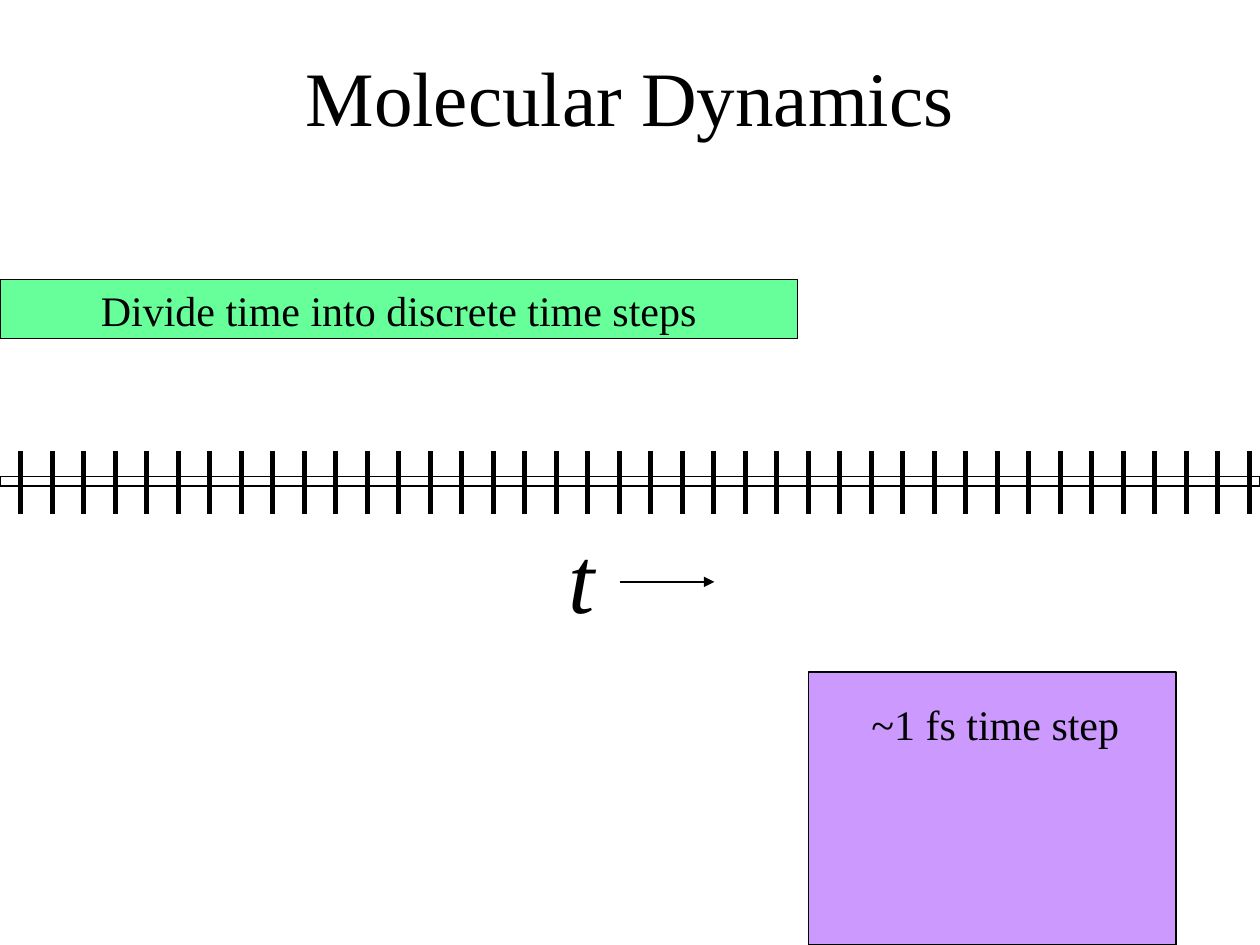
from lxml import etree
from pptx import Presentation
from pptx.dml.color import RGBColor
from pptx.enum.shapes import MSO_CONNECTOR, MSO_SHAPE
from pptx.enum.text import MSO_ANCHOR, PP_ALIGN
from pptx.oxml.ns import qn
from pptx.util import Cm, Pt

STRAIGHT = MSO_CONNECTOR.STRAIGHT
RECTANGLE = MSO_SHAPE.RECTANGLE
MIDDLE = MSO_ANCHOR.MIDDLE
TOP = MSO_ANCHOR.TOP
CENTER = PP_ALIGN.CENTER
LEFT = PP_ALIGN.LEFT
TICK_COUNT = 40


def color(hex_string):
    return RGBColor.from_string(hex_string)


presentation = Presentation()
presentation.slide_width = Cm(25.4)
presentation.slide_height = Cm(19.05)
slide = presentation.slides.add_slide(presentation.slide_layouts[6])

# Time axis bar, green statement and purple panel
panel_group = slide.shapes.add_group_shape()
boxes = []
for shapes, left, top, width, height, fill in [
    (slide.shapes, 0, 9.6, 25.4, 0.2, "FFFFFF"),
    (slide.shapes, 0, 5.64, 16.08, 1.19, "66FF99"),
    (panel_group.shapes, 16.3, 13.55, 7.41, 5.5, "CC99FF"),
]:
    shape = shapes.add_shape(RECTANGLE, Cm(left), Cm(top), Cm(width), Cm(height))
    shape.shadow.inherit = False
    shape.fill.solid()
    shape.fill.fore_color.rgb = color(fill)
    shape.line.color.rgb = color("000000")
    shape.line.width = Pt(0.75)
    boxes.append(shape)
axis_bar, statement, panel = boxes

# Text: title, statement, time symbol and step size
title = slide.shapes.add_textbox(0, Cm(1.07), Cm(25.4), Cm(1.7))
time_symbol = slide.shapes.add_textbox(Cm(11.22), Cm(10.34), Cm(1.27), Cm(2.31))
step_size = panel_group.shapes.add_textbox(Cm(16.89), Cm(14), Cm(6.35), Cm(1.17))
for shape, text, size, alignment, anchor in [
    (title, "Molecular Dynamics", 44, CENTER, MIDDLE),
    (statement, "Divide time into discrete time steps", 24, CENTER, MIDDLE),
    (time_symbol, "t", 54, LEFT, TOP),
    (step_size, "~1 fs time step", 24, CENTER, MIDDLE),
]:
    frame = shape.text_frame
    frame.word_wrap = True
    frame.vertical_anchor = anchor
    paragraph = frame.paragraphs[0]
    paragraph.text = text
    paragraph.alignment = alignment
    paragraph.font.name = "Times New Roman"
    paragraph.font.size = Pt(size)
    paragraph.font.italic = shape is time_symbol
    paragraph.font.color.rgb = color("000000")

# Evenly spaced ticks and the arrow of time
tick_group = slide.shapes.add_group_shape()
tick_gap = 25.4 / TICK_COUNT
lines = [
    (tick_group.shapes, 0.42 + i * tick_gap, 9.1, 0.42 + i * tick_gap, 10.37, 3)
    for i in range(TICK_COUNT)
]
lines.append((slide.shapes, 12.49, 11.73, 14.4, 11.73, 1.5))
for shapes, x1, y1, x2, y2, weight in lines:
    line = shapes.add_connector(STRAIGHT, Cm(x1), Cm(y1), Cm(x2), Cm(y2))
    line.line.color.rgb = color("000000")
    line.line.width = Pt(weight)
    etree.SubElement(line._element.spPr, qn("a:effectLst"))

# Arrowhead on the last line, the arrow of time
etree.SubElement(line.line._get_or_add_ln(), qn("a:tailEnd"), type="triangle")

presentation.save("out.pptx")
